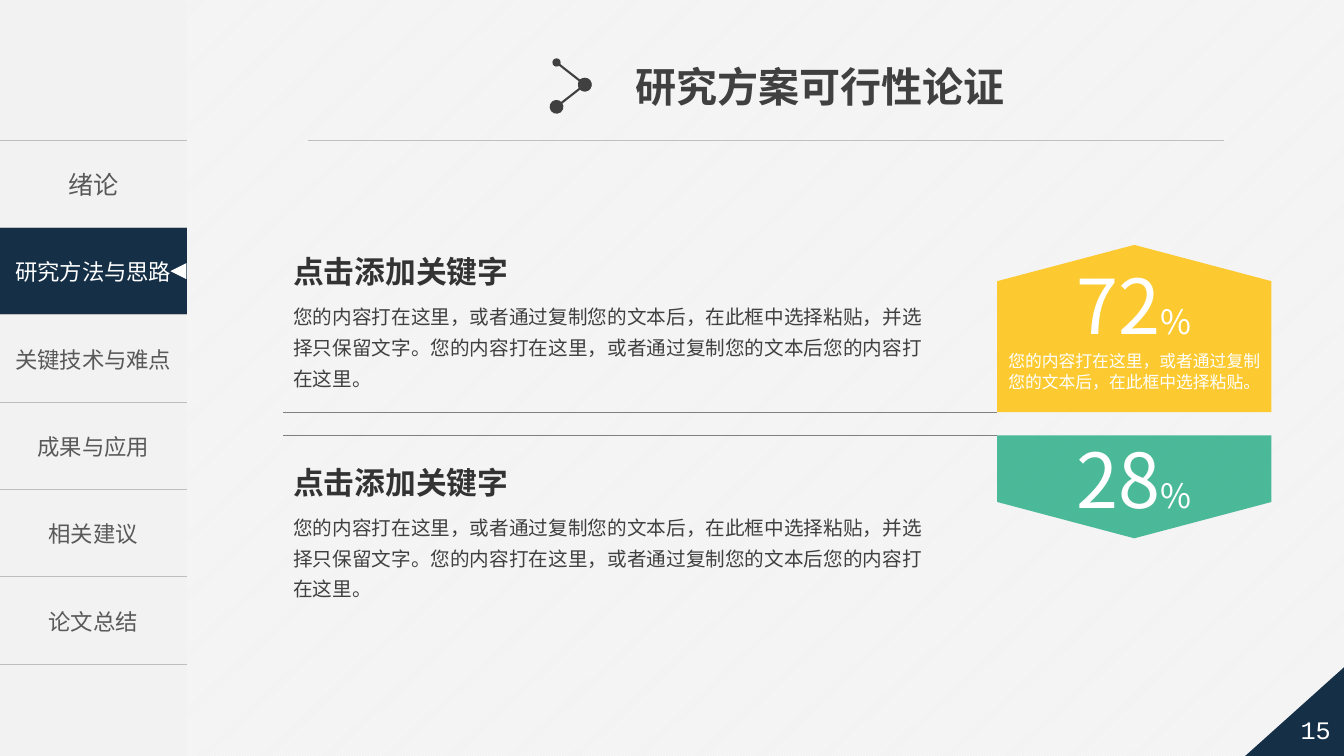
from lxml import etree
from pptx import Presentation
from pptx.dml.color import RGBColor
from pptx.enum.dml import MSO_PATTERN
from pptx.enum.shapes import MSO_CONNECTOR, MSO_SHAPE
from pptx.enum.text import MSO_ANCHOR, PP_ALIGN
from pptx.oxml.ns import qn
from pptx.util import Inches, Pt

LEFT, CENTER = PP_ALIGN.LEFT, PP_ALIGN.CENTER
TOP, MIDDLE = MSO_ANCHOR.TOP, MSO_ANCHOR.MIDDLE
RECT, TRI, CORNER = MSO_SHAPE.RECTANGLE, MSO_SHAPE.ISOSCELES_TRIANGLE, MSO_SHAPE.RIGHT_TRIANGLE
STRAIGHT = MSO_CONNECTOR.STRAIGHT
HATCH = MSO_PATTERN.LIGHT_UPWARD_DIAGONAL
SANS = "Noto Sans CJK SC"
COLS, ROWS = 133.3, 75  # grid cells of a tenth of an inch
COLOR = {
    "paper": "F2F2F2", "white": "FFFFFF", "navy": "152F47", "rule": "BFBFBF",
    "gray": "808080", "menu": "595959", "body": "404040", "head": "333333",
    "gold": "FFC000", "green": "21AB82",
}
MENU = ["绪论", "研究方法与思路", "关键技术与难点", "成果与应用", "相关建议", "论文总结"]
ACTIVE = 1
HEAD = "点击添加关键字"
BODY = ("您的内容打在这里，或者通过复制您的文本后，在此框中选择粘贴，并选择只保留文字。"
        "您的内容打在这里，或者通过复制您的文本后您的内容打在这里。")
NOTE = "您的内容打在这里，或者通过复制您的文本后，在此框中选择粘贴。"


def grid(*cells):
    return [Inches(cell / 10) for cell in cells]


def rgb(name):
    return RGBColor.from_string(COLOR[name])


def child(parent, tag, **attrs):
    return etree.SubElement(parent, qn(tag), attrs)


def write(frame, *paras, color="white", font=SANS, bold=False,
          align=LEFT, space=None, anchor=TOP, wrap=True):
    """Each paragraph is a list of (words, size) runs."""
    frame.word_wrap = wrap
    frame.vertical_anchor = anchor
    for i, runs in enumerate(paras):
        para = frame.add_paragraph() if i else frame.paragraphs[0]
        para.alignment, para.line_spacing = align, space
        for words, size in runs:
            run = para.add_run()
            run.text = words
            run.font.size, run.font.bold, run.font.name = Pt(size), bold, font
            run.font.color.rgb = rgb(color)
            child(run._r.get_or_add_rPr(), "a:ea", typeface=SANS)


def label(slide, box, words, size, **style):
    shape = slide.shapes.add_textbox(*grid(*box))
    write(shape.text_frame, [(words, size)], **style)


def paint(shape, color):
    shape.shadow.inherit = False
    shape.fill.solid()
    shape.fill.fore_color.rgb = rgb(color)
    shape.line.fill.background()


def block(slide, kind, box, color):
    shape = slide.shapes.add_shape(kind, *grid(*box))
    paint(shape, color)
    return shape


def rule(slide, start, end, color, width, dots=()):
    """Dots are the sizes of the round ends at start and end."""
    line = slide.shapes.add_connector(STRAIGHT, *grid(*start, *end))
    line.line.color.rgb = rgb(color)
    line.line.width = Pt(width)
    for tag, size in zip(("a:headEnd", "a:tailEnd"), dots):
        child(line.line._get_or_add_ln(), tag, type="oval", w=size, len=size)
    child(line._element.spPr, "a:effectLst")


def edge(cell):
    props = cell._tc.get_or_add_tcPr()
    for i, tag in enumerate(("a:lnL", "a:lnR", "a:lnT", "a:lnB")):
        line = etree.Element(qn(tag), w=str(Pt(1)))
        if i < 2:
            child(line, "a:noFill")
        else:
            child(child(line, "a:solidFill"), "a:srgbClr", val=COLOR["rule"])
        props.insert(i, line)


def sidebar(slide, box):
    x, y, w, h = box
    block(slide, RECT, box, "paper")
    top, step = y + 13.9, 52 / len(MENU)
    table = slide.shapes.add_table(
        len(MENU), 1, *grid(x, top, w, step * len(MENU))).table
    table.first_row = table.horz_banding = False
    for i, words in enumerate(MENU):
        cell = table.cell(i, 0)
        active = i == ACTIVE
        write(cell.text_frame, [(words, 16 if i else 18)],
              color="white" if active else "menu", align=CENTER)
        cell.vertical_anchor = MIDDLE
        if active:
            cell.fill.solid()
            cell.fill.fore_color.rgb = rgb("navy")
        else:
            cell.fill.background()
        edge(cell)
    side = 1.6
    middle = top + step * (ACTIVE + 0.5)
    mark = block(slide, TRI, (x + w - side, middle - side / 2, side, side), "white")
    mark.rotation = 270


def header(slide, box):
    x, y, w, h = box
    title = slide.shapes.title
    title.left, title.top, title.width, title.height = grid(x + 31.5, y, 40.5, 5.9)
    write(title.text_frame, [("研究方案可行性论证", 29.3)], color="body",
          font="Arial", bold=True, anchor=MIDDLE, wrap=False)
    left, right, mid = x + 24.7, x + 27.5, y + 2.8
    rule(slide, (left, mid - 2.2), (right, mid), "body", 1.5, ("med", "lg"))
    rule(slide, (right, mid), (left, mid + 2.2), "body", 1.5, ("lg", "lg"))
    rule(slide, (x, y + h), (x + w, y + h), "rule", 0.5)


def topic(slide, box):
    x, y, w, h = box
    label(slide, (x, y, 30.5, 4.7), HEAD, 22, color="head", bold=True)
    label(slide, (x, y + 4.5, w, h - 4.5), BODY, 14, color="body", space=1.3)


def badge(slide, box, color, value, inset, up, note=None):
    """A panel whose point faces up or down."""
    x, y, w, h = box
    tip, flat = (y, y + h) if up else (y + h, y)
    neck = tip + (3.6 if up else -3.6)
    spots = [(x, flat), (x, neck), (x + w / 2, tip), (x + w, neck), (x + w, flat)]
    first, *rest = [tuple(grid(*spot)) for spot in spots]
    outline = slide.shapes.build_freeform(*first)
    outline.add_line_segments(rest)
    shape = outline.convert_to_shape()
    paint(shape, color)
    child(shape._element.spPr.find(".//" + qn("a:srgbClr")), "a:alpha", val="80000")
    shape.text_frame.margin_top = grid(inset)[0]
    paras = [[(value, 54), ("%", 24)]]
    if note:
        paras.append([(note, 12)])
    write(shape.text_frame, *paras, align=CENTER, space=Pt(15))


def content(slide, box):
    x, y, w, h = box
    panel, upper, gap = 27.2, 16.6, 2.3
    edge_x, low = x + w - panel, y + upper + gap
    badge(slide, (edge_x, y, panel, upper), "gold", "72", 8.3, True, NOTE)
    badge(slide, (edge_x, low, panel, 10.2), "green", "28", 6.7, False)
    for level in (y + upper, low):
        rule(slide, (edge_x, level), (x, level), "gray", 0.5)
    for top in (y + 0.3, low + 2.3):
        topic(slide, (x, top, 65.4, 14.7))


def folio(slide, box):
    x, y, w, h = box
    corner = block(slide, CORNER, box, "navy")
    corner._element.spPr.get_or_add_xfrm().set("flipH", "1")
    label(slide, (x + w - 5.6, y + h - 5.3, 5.6, 5.3), "15", 18,
          font="Courier New", align=CENTER, anchor=MIDDLE, wrap=False)


def main():
    deck = Presentation()
    deck.slide_width, deck.slide_height = grid(COLS, ROWS)
    slide = deck.slides.add_slide(deck.slide_layouts[5])
    back = slide.background.fill
    back.patterned()
    back.pattern = HATCH
    back.fore_color.rgb, back.back_color.rgb = rgb("white"), rgb("paper")
    sidebar(slide, (0, 0, 18.5, ROWS))
    header(slide, (30.5, 5.6, 90.9, 8.3))
    content(slide, (28.1, 24.3, 98, 29.1))
    folio(slide, (COLS - 9.8, ROWS - 8.8, 9.8, 8.8))
    deck.save("out.pptx")


if __name__ == "__main__":
    main()
